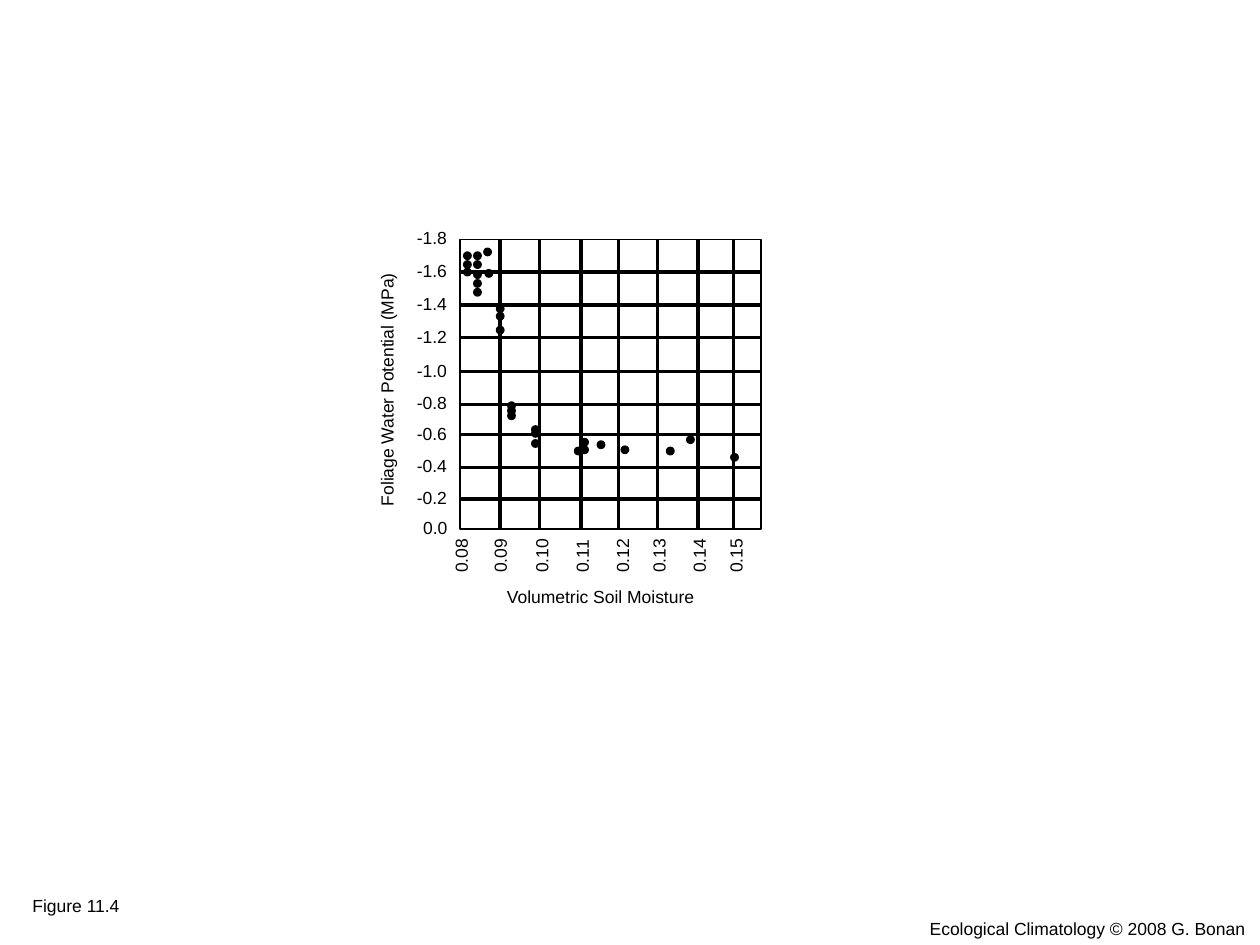
from pptx import Presentation
from pptx.dml.color import RGBColor
from pptx.enum.shapes import MSO_CONNECTOR, MSO_SHAPE
from pptx.enum.text import MSO_AUTO_SIZE
from pptx.oxml.ns import qn
from pptx.util import Inches, Pt
from lxml.etree import SubElement

BLACK = RGBColor(0, 0, 0)
FONT = {"name": "Arial", "size": Pt(10)}
WIDE, HIGH = 10, 7.5

# Plot frame and dot size, in inches
LEFT, TOP, RIGHT, BASE = 3.65, 1.9, 6.04, 4.2
DOT = 0.06
TEXT_H = 0.27

# Moisture label, grid line x, label centre x
COLS = [("0.08", LEFT, 3.66), ("0.09", 3.97, 3.97), ("0.10", 4.28, 4.3),
        ("0.11", 4.61, 4.62), ("0.12", 4.91, 4.94), ("0.13", 5.22, 5.23),
        ("0.14", 5.54, 5.55), ("0.15", 5.82, 5.84)]

# Potential label, grid line y
ROWS = [("-1.8", TOP), ("-1.6", 2.16), ("-1.4", 2.42), ("-1.2", 2.68),
        ("-1.0", 2.95), ("-0.8", 3.21), ("-0.6", 3.45), ("-0.4", 3.71),
        ("-0.2", 3.96), ("0.0", BASE)]

# Left edge of a stack of dots: top edge of each dot
DOTS = {3.68: [2, 2.07, 2.13], 3.76: [2, 2.07, 2.15, 2.22, 2.29],
        3.84: [1.97], 3.85: [2.14], 3.94: [2.42, 2.48, 2.59],
        4.03: [3.19, 3.23, 3.27], 4.22: [3.38, 3.41, 3.49], 4.56: [3.55],
        4.61: [3.48, 3.54], 4.74: [3.5], 4.93: [3.54], 5.29: [3.55],
        5.45: [3.46], 5.8: [3.6]}

# Text, centre x, centre y, width, turn
TITLES = [("Volumetric Soil Moisture", 4.77, 4.74, 1.69, 0),
          ("Foliage Water Potential (MPa)", 3.07, 3.09, 2.05, 270),
          ("Figure 11.4", 0.61, 7.19, 0.9, 0),
          ("Ecological Climatology © 2008 G. Bonan", 8.64, 7.37, 2.72, 0)]

deck = Presentation()
deck.slide_width, deck.slide_height = Inches(WIDE), Inches(HIGH)
shapes = deck.slides.add_slide(deck.slide_layouts[6]).shapes


def add_mark(kind, x, y, wide, high, solid):
    mark = shapes.add_shape(kind, *map(Inches, (x, y, wide, high)))
    mark.shadow.inherit = False
    mark.line.color.rgb = BLACK
    mark.line.width = Pt(0.75)
    if solid:
        mark.fill.solid()
        mark.fill.fore_color.rgb = BLACK
    else:
        mark.fill.background()


def add_rule(x1, y1, x2, y2):
    """Draw one hairline of the grid."""
    rule = shapes.add_connector(MSO_CONNECTOR.STRAIGHT,
                                *map(Inches, (x1, y1, x2, y2)))
    rule.line.color.rgb = BLACK
    rule.line.width = Pt(0)
    SubElement(rule._element.spPr, qn("a:effectLst"))


def add_label(text, x, y, wide, turn=0):
    """Place text by its centre."""
    box = shapes.add_textbox(*map(Inches, (x - wide / 2, y - TEXT_H / 2,
                                           wide, TEXT_H)))
    box.rotation = turn
    frame = box.text_frame
    frame.word_wrap = False
    frame.auto_size = MSO_AUTO_SIZE.SHAPE_TO_FIT_TEXT
    run = frame.paragraphs[0].add_run()
    run.text = text
    for key, value in FONT.items():
        setattr(run.font, key, value)
    run.font.color.rgb = BLACK


add_mark(MSO_SHAPE.RECTANGLE, LEFT, TOP, RIGHT - LEFT, BASE - TOP, False)
for x, tops in DOTS.items():
    for y in tops:
        add_mark(MSO_SHAPE.OVAL, x, y, DOT, DOT, True)

for _, y in ROWS[1:-1]:
    add_rule(LEFT, y, RIGHT, y)
for _, x, _ in COLS[1:]:
    add_rule(x, BASE, x, TOP)

for text, _, x in COLS:
    add_label(text, x, BASE + 0.21, 0.47, 270)
for text, y in ROWS:
    wide = 0.44 if text.startswith("-") else 0.39
    add_label(text, LEFT - wide / 2, y - 0.01, wide)
for title in TITLES:
    add_label(*title)

deck.save("out.pptx")
